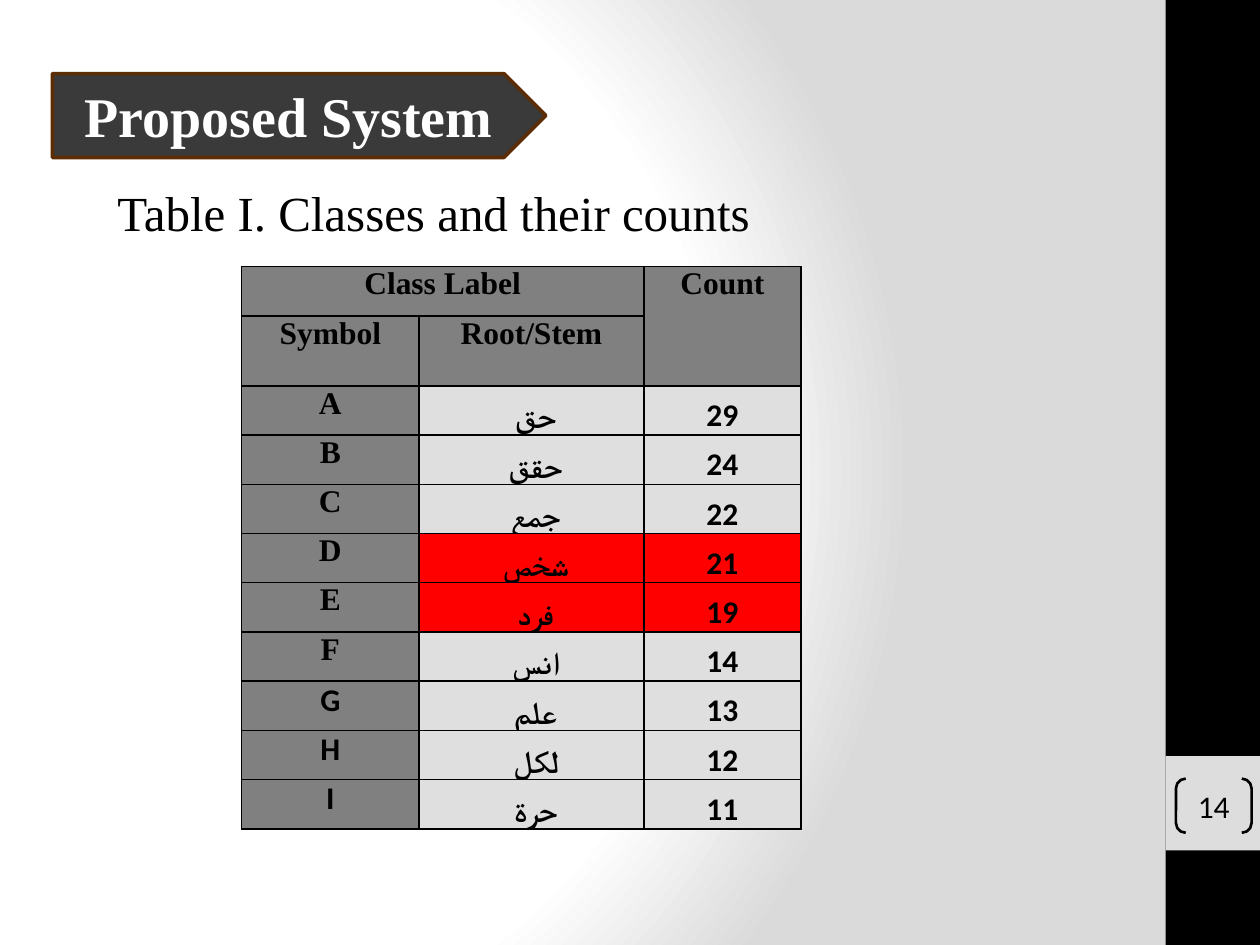
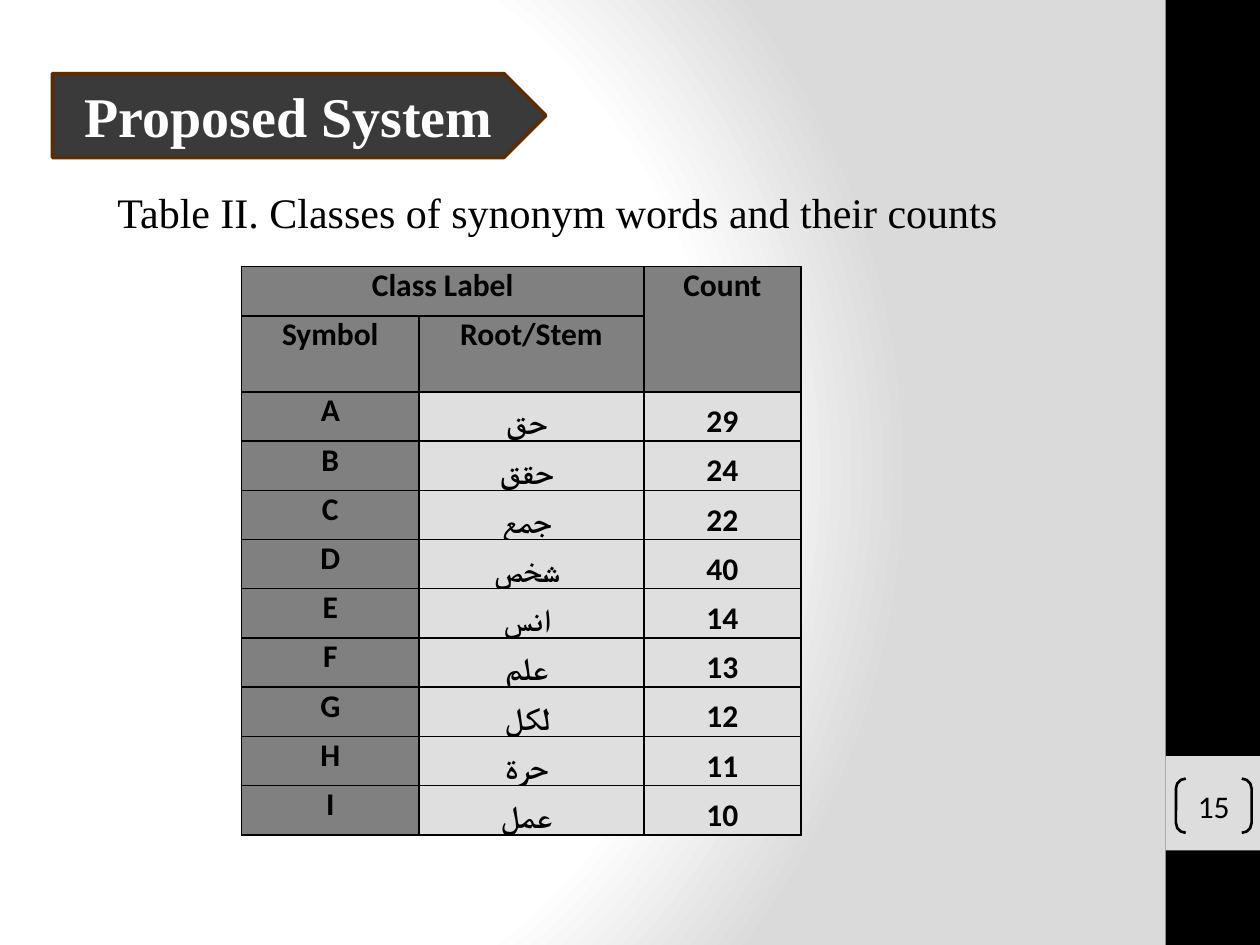
import dataclasses
import typing

import pptx
import pptx.dml.color
import pptx.enum.shapes
import pptx.enum.text
import pptx.oxml
import pptx.oxml.ns
import pptx.util

Shape = pptx.enum.shapes.MSO_SHAPE
Anchor = pptx.enum.text.MSO_ANCHOR
Align = pptx.enum.text.PP_ALIGN

SLIDE_WIDTH = pptx.util.Inches(10)
SLIDE_HEIGHT = pptx.util.Inches(7.5)
GRID_COLUMNS = 120
GRID_ROWS = 90

COLORS = {
    "black": "000000",
    "white": "FFFFFF",
    "background edge": "DADADA",
    "number box": "DDDDDD",
    "title": "3A3A3A",
    "title border": "5C2C04",
    "header": "808080",
    "value": "DFDFDF",
    "highlight": "FF0000",
}
SERIF = "Times New Roman"
SANS = "Calibri"

TABLE_LEFT, TABLE_TOP = 23, 25.4
TABLE_COLUMNS = (16.92, 21.4, 14.96)
TABLE_ROW = 4.69


class Box(typing.NamedTuple):
    column: float
    row: float
    columns: float
    rows: float

    def lengths(self) -> tuple[int, int, int, int]:
        return (across(self.column), down(self.row), across(self.columns), down(self.rows))


@dataclasses.dataclass(frozen=True)
class TextStyle:
    size: float
    font: str
    color: str = "black"
    bold: bool = False


@dataclasses.dataclass(frozen=True)
class Panel:
    preset: Shape
    box: Box
    fill: str | None = None
    line: str | None = None
    line_width: float = 0
    adjustment: float | None = None


@dataclasses.dataclass(frozen=True)
class ClassRow:
    symbol: str
    root: str
    count: int
    symbol_font: str = SANS
    highlighted: bool = False


@dataclasses.dataclass(frozen=True)
class TableSlide:
    number: int
    caption: str
    caption_size: float
    caption_box: Box
    header_font: str
    subheader_rows: float
    right_to_left: bool
    classes: tuple[ClassRow, ...]


SIDE_BAND = Panel(Shape.RECTANGLE, Box(111, 0, 9, 90), "black")
NUMBER_BOX = Panel(Shape.RECTANGLE, Box(111, 72, 9, 9), "number box")
NUMBER_BRACKETS = Panel(Shape.DOUBLE_BRACKET, Box(112, 74.16, 7.2, 5.16),
                        line="black", line_width=1.5, adjustment=0.18)
TITLE_ARROW = Panel(Shape.PENTAGON, Box(5, 7, 47, 8), "title", "title border", 2)

TABLE_SLIDES = (
    TableSlide(
        14, "Table I. Classes and their counts", 28, Box(10, 16.8, 63.24, 10.56),
        SERIF, 6.67, True,
        (
            ClassRow("A", "حق ", 29, SERIF),
            ClassRow("B", "حقق ", 24, SERIF),
            ClassRow("C", "جمع ", 22, SERIF),
            ClassRow("D", "شخص ", 21, SERIF, True),
            ClassRow("E", "فرد ", 19, SERIF, True),
            ClassRow("F", "انس ", 14, SERIF),
            ClassRow("G", "علم ", 13),
            ClassRow("H", "لكل ", 12),
            ClassRow("I", "حرة ", 11),
        ),
    ),
    TableSlide(
        15, "Table II. Classes of synonym words and their counts", 24,
        Box(10, 17.16, 87, 9.72), SANS, 7.24, False,
        (
            ClassRow("A", "حق ", 29),
            ClassRow("B", "حقق ", 24),
            ClassRow("C", "جمع ", 22),
            ClassRow("D", "شخص ", 40),
            ClassRow("E", "انس ", 14),
            ClassRow("F", "علم ", 13),
            ClassRow("G", "لكل ", 12),
            ClassRow("H", "حرة ", 11),
            ClassRow("I", "عمل ", 10),
        ),
    ),
)


def across(columns: float) -> int:
    return round(SLIDE_WIDTH * columns / GRID_COLUMNS)


def down(rows: float) -> int:
    return round(SLIDE_HEIGHT * rows / GRID_ROWS)


def rgb(name: str) -> pptx.dml.color.RGBColor:
    return pptx.dml.color.RGBColor.from_string(COLORS[name])


def write(text_frame, text: str, style: TextStyle, align: Align = Align.CENTER):
    paragraph = text_frame.paragraphs[0]
    paragraph.alignment = align
    run = paragraph.add_run()
    run.text = text
    run.font.size = pptx.util.Pt(style.size)
    run.font.name = style.font
    run.font.bold = style.bold
    run.font.color.rgb = rgb(style.color)
    return paragraph


def set_background(master) -> None:
    master.background.fill.gradient()
    gradient = master.element.find(".//" + pptx.oxml.ns.qn("a:gradFill"))
    stops = "".join(
        f'<a:gs pos="{share * 1000}"><a:srgbClr val="{COLORS[name]}"/></a:gs>'
        for share, name in ((0, "white"), (75, "white"), (100, "background edge"))
    )
    replacement = pptx.oxml.parse_xml(
        f'<a:gradFill {pptx.oxml.ns.nsdecls("a")} rotWithShape="1"><a:gsLst>{stops}</a:gsLst>'
        '<a:path path="circle"><a:fillToRect l="20000" t="50000" r="100000" b="50000"/></a:path>'
        "</a:gradFill>"
    )
    gradient.getparent().replace(gradient, replacement)


def add_panel(slide, panel: Panel):
    shape = slide.shapes.add_shape(panel.preset, *panel.box.lengths())
    shape.shadow.inherit = False
    if panel.adjustment is not None:
        shape.adjustments[0] = panel.adjustment
    if panel.fill:
        shape.fill.solid()
        shape.fill.fore_color.rgb = rgb(panel.fill)
    else:
        shape.fill.background()
    if panel.line:
        shape.line.color.rgb = rgb(panel.line)
        shape.line.width = pptx.util.Pt(panel.line_width)
    else:
        shape.line.fill.background()
    shape.text_frame.vertical_anchor = Anchor.MIDDLE
    return shape


def add_frame(slide, number: int) -> None:
    add_panel(slide, SIDE_BAND)
    add_panel(slide, NUMBER_BOX)
    number_frame = add_panel(slide, NUMBER_BRACKETS).text_frame
    number_frame.margin_left = number_frame.margin_right = 0
    number_frame.margin_top = number_frame.margin_bottom = 0
    write(number_frame, str(number), TextStyle(18, SANS))
    title_frame = add_panel(slide, TITLE_ARROW).text_frame
    write(title_frame, "Proposed System", TextStyle(32, SERIF, "white", True))


def add_caption(slide, content: TableSlide) -> None:
    text_frame = slide.shapes.add_textbox(*content.caption_box.lengths()).text_frame
    text_frame.word_wrap = False
    text_frame.vertical_anchor = Anchor.TOP
    write(text_frame, content.caption, TextStyle(content.caption_size, SERIF), Align.LEFT)


def style_cell(cell, fill: str, anchor: Anchor = Anchor.TOP) -> None:
    cell.margin_left = cell.margin_right = pptx.util.Inches(0.07)
    cell.margin_top = cell.margin_bottom = 0
    cell.vertical_anchor = anchor
    cell.fill.solid()
    cell.fill.fore_color.rgb = rgb(fill)
    properties = cell._tc.get_or_add_tcPr()
    for position, side in enumerate("LRTB"):
        properties.insert(position, pptx.oxml.parse_xml(
            f'<a:ln{side} {pptx.oxml.ns.nsdecls("a")} w="{pptx.util.Pt(1)}"><a:solidFill>'
            f'<a:srgbClr val="{COLORS["black"]}"/></a:solidFill></a:ln{side}>'
        ))


def add_class_table(slide, content: TableSlide) -> None:
    heights = [TABLE_ROW, content.subheader_rows] + [TABLE_ROW] * len(content.classes)
    box = Box(TABLE_LEFT, TABLE_TOP, sum(TABLE_COLUMNS), sum(heights))
    table = slide.shapes.add_table(len(heights), len(TABLE_COLUMNS), *box.lengths()).table
    table.first_row = table.horz_banding = False
    for column, width in zip(table.columns, TABLE_COLUMNS):
        column.width = across(width)
    for row, height in zip(table.rows, heights):
        row.height = down(height)

    for row_index in range(2):
        for column_index in range(len(TABLE_COLUMNS)):
            style_cell(table.cell(row_index, column_index), "header")
    table.cell(0, 0).merge(table.cell(0, 1))
    table.cell(0, 2).merge(table.cell(1, 2))
    header_style = TextStyle(18, content.header_font, bold=True)
    headers = {(0, 0): "Class Label", (0, 2): "Count", (1, 0): "Symbol", (1, 1): "Root/Stem"}
    for position, label in headers.items():
        write(table.cell(*position).text_frame, label, header_style)

    value_style = TextStyle(18, SANS, bold=True)
    for row_index, entry in enumerate(content.classes, start=2):
        symbol, root, count = (table.cell(row_index, index) for index in range(3))
        style_cell(symbol, "header")
        write(symbol.text_frame, entry.symbol, TextStyle(18, entry.symbol_font, bold=True))
        for cell in (root, count):
            style_cell(cell, "highlight" if entry.highlighted else "value", Anchor.BOTTOM)
        paragraph = write(root.text_frame, entry.root, value_style)
        if content.right_to_left:
            paragraph._p.get_or_add_pPr().set("rtl", "1")
        write(count.text_frame, str(entry.count), value_style)


def main() -> None:
    presentation = pptx.Presentation()
    presentation.slide_width = SLIDE_WIDTH
    presentation.slide_height = SLIDE_HEIGHT
    set_background(presentation.slide_master)
    for content in TABLE_SLIDES:
        slide = presentation.slides.add_slide(presentation.slide_layouts[6])
        add_frame(slide, content.number)
        add_class_table(slide, content)
        add_caption(slide, content)
    presentation.save("out.pptx")


if __name__ == "__main__":
    main()
